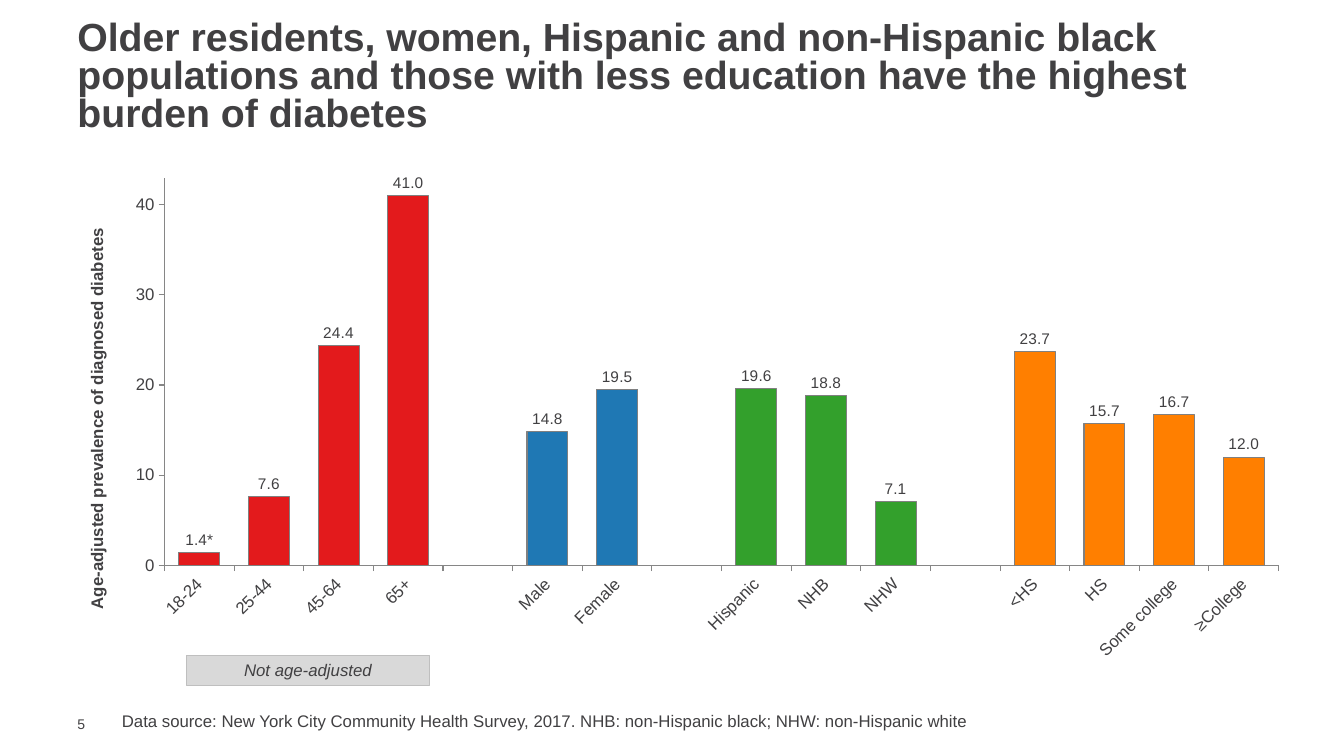
import lxml.etree
import pptx
import pptx.chart.data
import pptx.dml.color
import pptx.enum.chart
import pptx.enum.shapes
import pptx.enum.text
import pptx.oxml
import pptx.oxml.ns
import pptx.util

EMU_PER_PX = 9144

THEME = {
    "font": "Arial",
    "text": "414042",
    "axis": "868686",
    "bar_line": "808080",
    "note_fill": "D9D9D9",
    "note_line": "BFBFBF",
    "title_size": 28,
    "body_size": 12,
    "value_size": 11,
    "number_size": 10,
    "chart_size": 18,
    "line_width": 0.75,
}

GROUPS = [
    ("E31A1C", [("18-24", 1.4), ("25-44", 7.6), ("45-64", 24.4), ("65+", 41)]),
    ("1F78B4", [("Male", 14.8), ("Female", 19.5)]),
    ("33A02C", [("Hispanic", 19.6), ("NHB", 18.8), ("NHW", 7.1)]),
    ("FF7F00", [("<HS", 23.7), ("HS", 15.7), ("Some college", 16.7), ("≥College", 12)]),
]

PLOT_LAYOUT = {"x": 0.079, "y": 0.078, "w": 0.908, "h": 0.693}


def px(length):
    return pptx.util.Emu(length * EMU_PER_PX)


def rgb(name):
    return pptx.dml.color.RGBColor.from_string(THEME.get(name, name))


def apply_format(target, values):
    for name, value in values.items():
        setattr(target, name, value)


def style_font(font, size, **extra):
    apply_format(font, {"name": THEME["font"], "size": pptx.util.Pt(THEME[size]), **extra})
    font.color.rgb = rgb("text")


def style_line(line, color):
    line.color.rgb = rgb(color)
    line.width = pptx.util.Pt(THEME["line_width"])


def write_text(shape, text, size, font_values=None, paragraph_values=None, frame_values=None):
    frame = shape.text_frame
    apply_format(frame, {
        "word_wrap": True,
        "auto_size": pptx.enum.text.MSO_AUTO_SIZE.SHAPE_TO_FIT_TEXT,
        **(frame_values or {}),
    })
    paragraph = frame.paragraphs[0]
    apply_format(paragraph, paragraph_values or {})
    run = paragraph.add_run()
    run.text = text
    style_font(run.font, size, **(font_values or {}))


def add_text(slide, box, text, size, **formats):
    shape = slide.shapes.add_textbox(*map(px, box))
    write_text(shape, text, size, **formats)


def add_note(slide, box, text):
    shape = slide.shapes.add_shape(pptx.enum.shapes.MSO_SHAPE.RECTANGLE, *map(px, box))
    shape.shadow.inherit = False
    shape.fill.solid()
    shape.fill.fore_color.rgb = rgb("note_fill")
    style_line(shape.line, "note_line")
    write_text(
        shape, text, "body_size",
        font_values={"italic": True},
        paragraph_values={"alignment": pptx.enum.text.PP_ALIGN.CENTER},
        frame_values={"vertical_anchor": pptx.enum.text.MSO_ANCHOR.TOP},
    )


def set_plot_layout(chart):
    plot_area = chart._chartSpace.chart.plotArea
    for layout in plot_area.findall(pptx.oxml.ns.qn("c:layout")):
        plot_area.remove(layout)
    layout = lxml.etree.Element(pptx.oxml.ns.qn("c:layout"))
    manual = lxml.etree.SubElement(layout, pptx.oxml.ns.qn("c:manualLayout"))
    settings = {"layoutTarget": "inner", "xMode": "edge", "yMode": "edge", **PLOT_LAYOUT}
    for name, value in settings.items():
        lxml.etree.SubElement(manual, pptx.oxml.ns.qn(f"c:{name}")).set("val", str(value))
    plot_area.insert(0, layout)


def style_axis(axis):
    apply_format(axis, {
        "has_major_gridlines": False,
        "major_tick_mark": pptx.enum.chart.XL_TICK_MARK.OUTSIDE,
        "minor_tick_mark": pptx.enum.chart.XL_TICK_MARK.NONE,
    })
    style_line(axis.format.line, "axis")
    style_font(axis.tick_labels.font, "body_size", bold=False)


def style_axes(chart):
    category_axis, value_axis = chart.category_axis, chart.value_axis
    style_axis(category_axis)
    style_axis(value_axis)
    labels_body = category_axis._element.find(pptx.oxml.ns.qn("c:txPr")).bodyPr
    labels_body.set("rot", "-2700000")
    labels_body.set("vert", "horz")
    apply_format(value_axis, {"minimum_scale": 0, "maximum_scale": 43, "major_unit": 10})
    frame = value_axis.axis_title.text_frame
    frame._txBody.bodyPr.set("rot", "-5400000")
    frame._txBody.bodyPr.set("vert", "horz")
    run = frame.paragraphs[0].add_run()
    run.text = "Age-adjusted prevalence of diagnosed diabetes"
    style_font(run.font, "body_size", bold=True)


def style_bar(bar, color):
    bar.format.fill.solid()
    bar.format.fill.fore_color.rgb = rgb(color)
    style_line(bar.format.line, "bar_line")


def label_bars(series):
    outside = pptx.enum.chart.XL_LABEL_POSITION.OUTSIDE_END
    labels = series.data_labels
    apply_format(labels, {
        "show_value": True,
        "number_format": "#,##0.0",
        "number_format_is_linked": False,
        "position": outside,
    })
    style_font(labels.font, "value_size")
    youngest = series.points[0].data_label
    run = youngest.text_frame.paragraphs[0].add_run()
    run.text = "1.4*"
    style_font(run.font, "value_size", bold=False)
    youngest.position = outside


def add_prevalence_chart(slide, box):
    bars = []
    for color, rows in GROUPS:
        if bars:
            bars.append(("", None, None))
        bars.extend((label, value, color) for label, value in rows)
    data = pptx.chart.data.CategoryChartData()
    data.categories = [label for label, _, _ in bars]
    data.add_series("Series 1", [value for _, value, _ in bars])
    chart = slide.shapes.add_chart(
        pptx.enum.chart.XL_CHART_TYPE.COLUMN_CLUSTERED, *map(px, box), data
    ).chart
    apply_format(chart, {"has_title": False, "has_legend": False})
    style_font(chart.font, "chart_size")
    apply_format(chart.plots[0], {"gap_width": 70, "vary_by_categories": False})
    series = chart.plots[0].series[0]
    series.invert_if_negative = False
    first_color = GROUPS[0][0]
    style_bar(series, first_color)
    for index, (_, _, color) in enumerate(bars):
        if color not in (None, first_color):
            style_bar(series.points[index], color)
    label_bars(series)
    style_axes(chart)
    set_plot_layout(chart)


def main():
    presentation = pptx.Presentation()
    apply_format(presentation, {"slide_width": px(1333), "slide_height": px(750)})
    slide = presentation.slides.add_slide(presentation.slide_layouts[6])
    middle = pptx.enum.text.MSO_ANCHOR.MIDDLE
    add_text(
        slide, (67, 710, 43, 17), "5", "number_size",
        frame_values={"vertical_anchor": middle, "margin_left": px(10),
                      "margin_top": 0, "margin_right": 0, "margin_bottom": 0},
    )
    add_text(
        slide, (67, 16, 1200, 123),
        "Older residents, women, Hispanic and non-Hispanic black populations "
        "and those with less education have the highest burden of diabetes",
        "title_size",
        font_values={"bold": True},
        paragraph_values={"line_spacing": 0.8},
        frame_values={"vertical_anchor": middle},
    )
    add_text(
        slide, (111, 700, 971, 30),
        "Data source: New York City Community Health Survey, 2017. "
        "NHB: non-Hispanic black; NHW: non-Hispanic white",
        "body_size",
    )
    add_note(slide, (185, 650, 241, 30), "Not age-adjusted")
    add_prevalence_chart(slide, (67, 133, 1217, 555))
    presentation.save("out.pptx")


if __name__ == "__main__":
    main()
